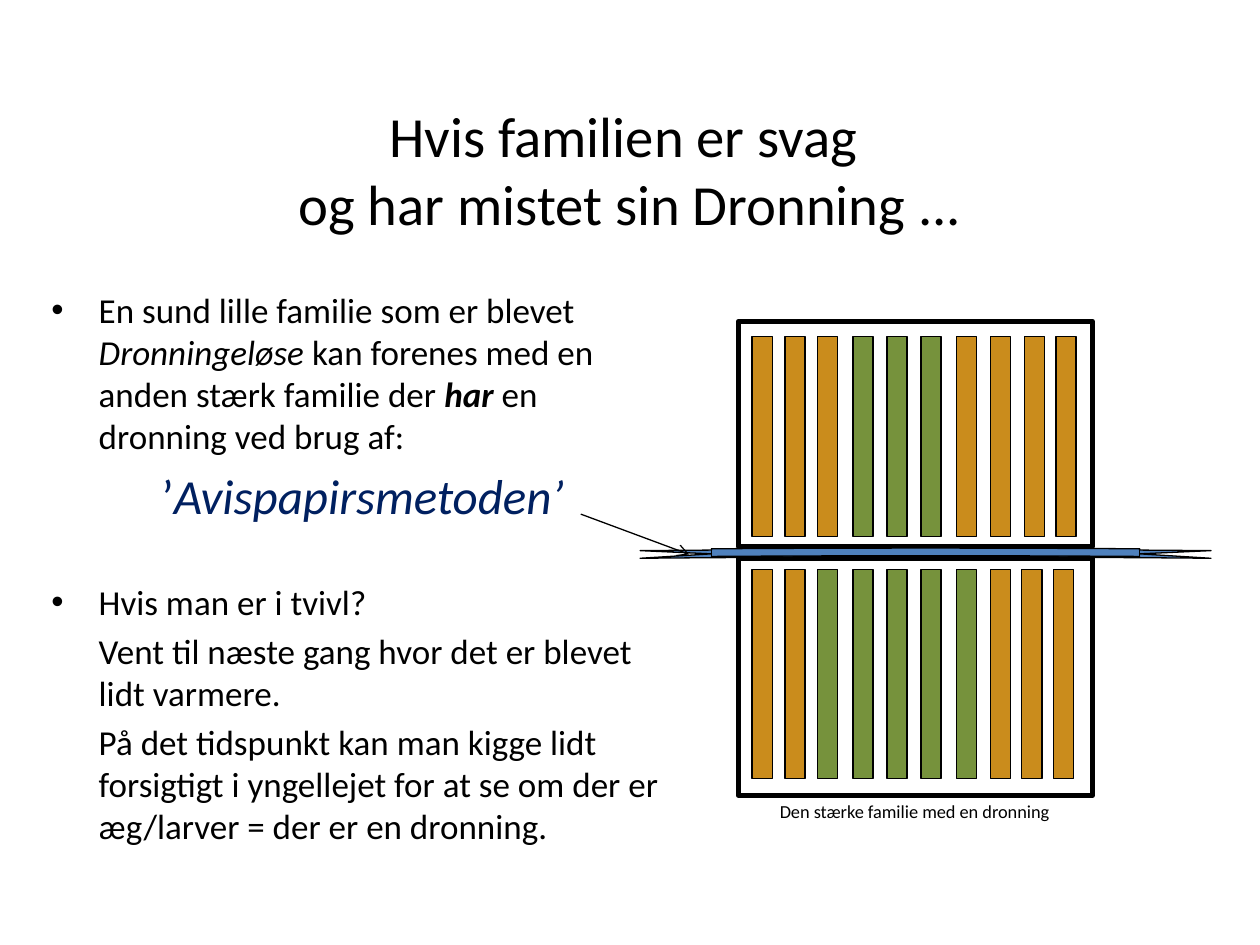
from lxml.etree import SubElement
from pptx import Presentation
from pptx.dml.color import RGBColor
from pptx.enum.shapes import MSO_CONNECTOR, MSO_SHAPE
from pptx.enum.text import MSO_ANCHOR, MSO_AUTO_SIZE, PP_ALIGN
from pptx.oxml.ns import qn
from pptx.util import Pt

FONT = "Calibri"
BLACK = "000000"
NAVY = "002060"
TONES = {"O": "CA8C1C", "G": "76923C"}
LEFTS = [429.8, 448.6, 467, 487.4, 506.9, 526.3, 546.5, 565.9]


def tint(code):
    return RGBColor.from_string(code)


def style(run, size, color=BLACK, bold=False, slant=False):
    font = run.font
    font.name, font.size = FONT, Pt(size)
    font.bold, font.italic = bold, slant
    font.color.rgb = tint(color)


def place(shape, left, top, width, height):
    shape.left, shape.top = Pt(left), Pt(top)
    shape.width, shape.height = Pt(width), Pt(height)


def add_title(slide, text):
    title = slide.shapes.title
    place(title, 54, 80, 612, 75.6)
    frame = title.text_frame
    frame.text = text
    frame.auto_size = MSO_AUTO_SIZE.NONE
    frame.vertical_anchor = MSO_ANCHOR.MIDDLE
    frame.margin_bottom = Pt(46)
    para = frame.paragraphs[0]
    para.alignment = PP_ALIGN.CENTER
    for run in para.runs:
        style(run, 32.4)


def add_box(slide, left, top, width, height):
    box = slide.shapes.add_textbox(Pt(left), Pt(top), Pt(width), Pt(height))
    box.text_frame.word_wrap = True
    return box.text_frame


def add_para(frame, parts, first=False, gap=4, left=27, bullet=False, size=20, color=BLACK):
    para = frame.paragraphs[0] if first else frame.add_paragraph()
    props = para._p.get_or_add_pPr()
    props.set("marL", str(Pt(left)))
    props.set("indent", str(Pt(-left if bullet else 0)))
    if bullet:
        SubElement(props, qn("a:buFont"), typeface="Arial")
        SubElement(props, qn("a:buChar"), char="•")
    para.space_before = Pt(0 if first else gap)
    for text, mark in parts:
        run = para.add_run()
        run.text = text
        style(run, size, color, "b" in mark, "i" in mark)


def add_block(shapes, kind, spot, fill, weight):
    shape = shapes.add_shape(kind, *map(Pt, spot))
    shape.shadow.inherit = False
    shape.fill.solid()
    shape.fill.fore_color.rgb = tint(fill)
    shape.line.color.rgb = tint(BLACK)
    shape.line.width = Pt(weight)
    return shape


def add_hive(slide, top, height, inset, depth, ends, frames):
    shapes = slide.shapes.add_group_shape().shapes
    rect = MSO_SHAPE.RECTANGLE
    add_block(shapes, rect, (421.9, top, 202.3, height), "FFFFFF", 3)
    for left, tone in zip(LEFTS + ends, frames):
        add_block(shapes, rect, (left, top + inset, 11.5, depth), TONES[tone], 0.75)


def add_paper(slide):
    spot = (365.8, 313.2, 326.2, 5.8)
    paper = add_block(slide.shapes, MSO_SHAPE.CURVED_UP_RIBBON, spot, "4F81BD", 0.75)
    for pos, value in enumerate((0.25, 1, 0.125)):
        paper.adjustments[pos] = value


def add_arrow(slide, *ends):
    arrow = slide.shapes.add_connector(MSO_CONNECTOR.STRAIGHT, *map(Pt, ends))
    arrow.line.color.rgb = tint(BLACK)
    arrow.line.width = Pt(0.75)
    SubElement(arrow.line._get_or_add_ln(), qn("a:tailEnd"), type="arrow")
    SubElement(arrow._element.spPr, qn("a:effectLst"))


def main():
    deck = Presentation()
    deck.slide_width, deck.slide_height = Pt(720), Pt(540)
    slide = deck.slides.add_slide(deck.slide_layouts[5])
    add_title(slide, "Hvis familien er svag \vog har mistet sin Dronning ...")

    body = add_box(slide, 22.3, 161.3, 365.8, 382.3)
    add_para(body, [
        ("En sund lille familie som er blevet ", ""),
        ("Dronningeløse", "i"),
        (" kan forenes med en anden stærk familie der ", ""),
        ("har", "bi"),
        (" en dronning ved brug af:", ""),
    ], first=True, bullet=True)
    add_para(body, [("’", ""), ("Avispapirsmetoden’", "i")],
             gap=5, left=63, size=28, color=NAVY)
    add_para(body, [("Hvis man er i tvivl?", "")], gap=32.4, bullet=True)
    add_para(body, [("Vent til næste gang hvor det er blevet lidt varmere.", "")])
    add_para(body, [("På det tidspunkt kan man kigge lidt forsigtigt i yngellejet "
                     "for at se om der er æg/larver = der er en dronning.", "")])

    add_hive(slide, 319, 135.4, 6.5, 119.5, [583.9, 601.9], "OOGGGGGOOO")
    add_hive(slide, 183.6, 128.9, 8.6, 114.5, [585.4, 603.4], "OOOGGGOOOO")
    add_paper(slide)

    note = add_box(slide, 438.5, 453.6, 202.3, 20.2)
    add_para(note, [("Den stærke familie med en dronning", "")],
             first=True, left=0, size=10.5)
    add_arrow(slide, 331.9, 293.8, 393.8, 316.8)
    deck.save("out.pptx")


if __name__ == "__main__":
    main()
